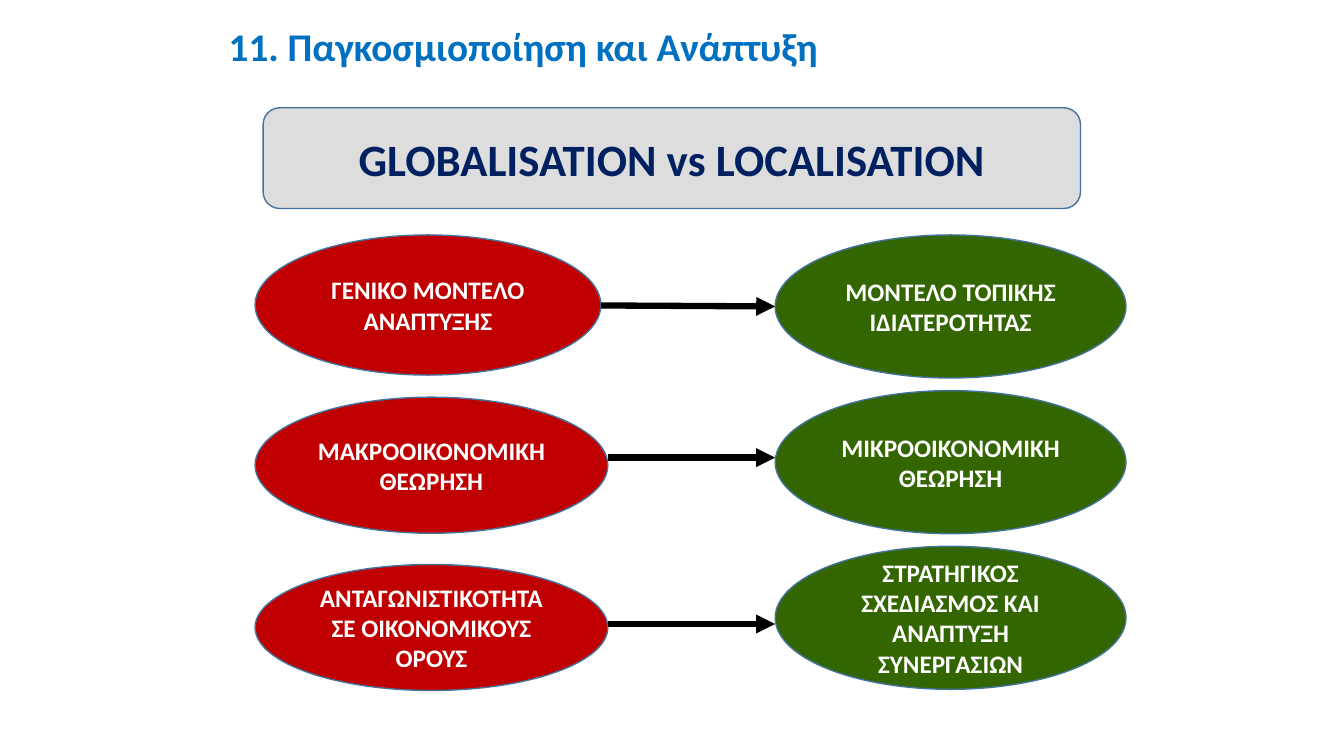
from dataclasses import dataclass

from lxml.etree import SubElement
from pptx import Presentation
from pptx.dml.color import RGBColor
from pptx.enum.shapes import MSO_CONNECTOR, MSO_SHAPE
from pptx.enum.text import MSO_ANCHOR, MSO_AUTO_SIZE, PP_ALIGN
from pptx.oxml.ns import qn
from pptx.slide import Slide
from pptx.text.text import TextFrame
from pptx.util import Pt

FONT = "Calibri"
OUTLINE = "43739E"
GLOBAL_RED = "C00000"
LOCAL_GREEN = "336600"
GLOBAL_LEFT = 182.2
LOCAL_LEFT, LOCAL_TOP, LOCAL_PITCH = 553.7, 167.8, 111.2
LOCAL_WIDTH, LOCAL_HEIGHT = 250.6, 102.2


@dataclass
class Contrast:
    """A global idea and the local idea its arrow leads to."""
    global_text: str
    local_text: str
    top: float
    width: float
    height: float
    arrow_start: tuple[float, float]
    arrow_end_y: float


CONTRASTS = [
    Contrast("ΓΕΝΙΚΟ ΜΟΝΤΕΛΟ ΑΝΑΠΤΥΞΗΣ", "ΜΟΝΤΕΛΟ ΤΟΠΙΚΗΣ ΙΔΙΑΤΕΡΟΤΗΤΑΣ",
             167.8, 247, 100.1, (429.2, 218.2), 218.9),
    Contrast("ΜΑΚΡΟΟΙΚΟΝΟΜΙΚΗ ΘΕΩΡΗΣΗ", "ΜΙΚΡΟΟΙΚΟΝΟΜΙΚΗ\nΘΕΩΡΗΣΗ",
             283.7, 252, 97.2, (434.6, 326.9), 326.9),
    Contrast("ΑΝΤΑΓΩΝΙΣΤΙΚΟΤΗΤΑ ΣΕ ΟΙΚΟΝΟΜΙΚΟΥΣ ΟΡΟΥΣ",
             "ΣΤΡΑΤΗΓΙΚΟΣ ΣΧΕΔΙΑΣΜΟΣ ΚΑΙ ΑΝΑΠΤΥΞΗ ΣΥΝΕΡΓΑΣΙΩΝ",
             403.2, 252, 90, (434.6, 445.7), 445.7),
]


def color(hex_value: str) -> RGBColor:
    return RGBColor.from_string(hex_value)


def write(frame: TextFrame, text: str, size: float, hex_value: str,
          alignment: PP_ALIGN = PP_ALIGN.CENTER) -> None:
    """Fill a frame with bold, vertically centred text."""
    frame.text = text
    frame.word_wrap = True
    frame.auto_size = MSO_AUTO_SIZE.NONE
    frame.vertical_anchor = MSO_ANCHOR.MIDDLE
    for para in frame.paragraphs:
        para.alignment = alignment
        for span in para.runs:
            span.font.name = FONT
            span.font.size = Pt(size)
            span.font.bold = True
            span.font.color.rgb = color(hex_value)


def add_title(page: Slide, text: str) -> None:
    title = page.shapes.title
    title.left, title.top, title.width, title.height = map(Pt, (156.2, 15.1, 648, 38.9))
    write(title.text_frame, text, 28, "0070C0", PP_ALIGN.LEFT)
    title.text_frame.paragraphs[0].line_spacing = 0.9


def add_box(page: Slide, kind: MSO_SHAPE, bounds: tuple[float, float, float, float],
            fill: str, text: str, size: float = 18, text_color: str = "FFFFFF") -> None:
    box = page.shapes.add_shape(kind, *map(Pt, bounds))
    box.shadow.inherit = False
    box.fill.solid()
    box.fill.fore_color.rgb = color(fill)
    box.line.color.rgb = color(OUTLINE)
    box.line.width = Pt(1)
    write(box.text_frame, text, size, text_color)


def add_arrow(page: Slide, start: tuple[float, float], end: tuple[float, float]) -> None:
    arrow = page.shapes.add_connector(MSO_CONNECTOR.STRAIGHT, *map(Pt, start + end))
    arrow.line.color.rgb = color("000000")
    arrow.line.width = Pt(4.5)
    SubElement(arrow.line._get_or_add_ln(), qn("a:tailEnd"), type="triangle")
    SubElement(arrow._element.spPr, qn("a:effectLst"))


def main() -> None:
    deck = Presentation()
    deck.slide_width, deck.slide_height = Pt(960), Pt(540)
    page = deck.slides.add_slide(deck.slide_layouts.get_by_name("Title Only"))
    add_title(page, "11. Παγκοσμιοποίηση και Ανάπτυξη")
    add_box(page, MSO_SHAPE.ROUNDED_RECTANGLE, (187.9, 77, 583.9, 72), "DDDDDD",
            "GLOBALISATION vs LOCALISATION", 32, "002060")
    for row, contrast in enumerate(CONTRASTS):
        add_box(page, MSO_SHAPE.OVAL,
                (GLOBAL_LEFT, contrast.top, contrast.width, contrast.height),
                GLOBAL_RED, contrast.global_text)
        add_box(page, MSO_SHAPE.OVAL,
                (LOCAL_LEFT, LOCAL_TOP + row * LOCAL_PITCH, LOCAL_WIDTH, LOCAL_HEIGHT),
                LOCAL_GREEN, contrast.local_text)
        add_arrow(page, contrast.arrow_start, (LOCAL_LEFT, contrast.arrow_end_y))
    deck.save("out.pptx")


if __name__ == "__main__":
    main()
